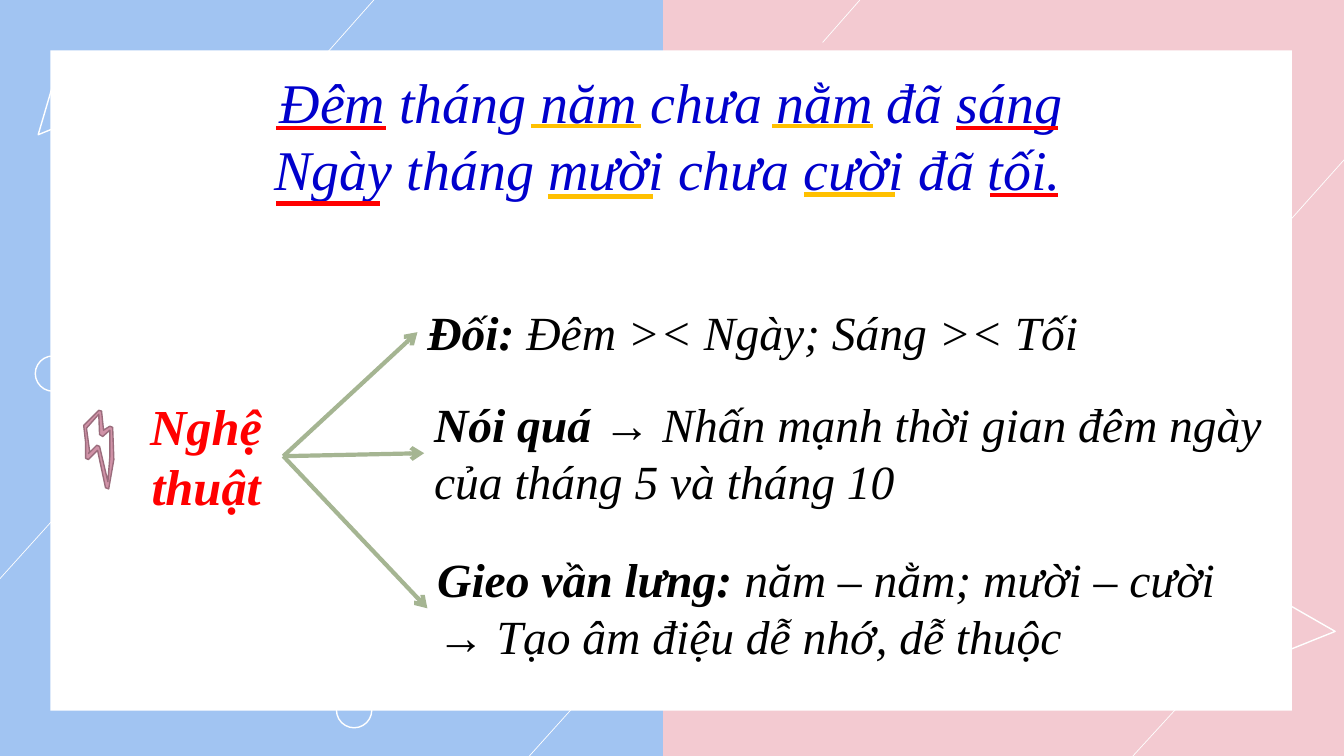
from collections import namedtuple

from lxml import etree
from pptx import Presentation
from pptx.dml.color import RGBColor
from pptx.enum.shapes import MSO_CONNECTOR, MSO_SHAPE
from pptx.enum.text import MSO_AUTO_SIZE, PP_ALIGN
from pptx.oxml.ns import qn
from pptx.util import Cm, Pt

BLUE = RGBColor(0xA1, 0xC4, 0xF2)
PINK = RGBColor(0xF3, 0xCA, 0xD1)
WHITE = RGBColor(0xFF, 0xFF, 0xFF)
BLACK = RGBColor(0x00, 0x00, 0x00)
VERSE_BLUE = RGBColor(0x00, 0x00, 0xCC)
RED = RGBColor(0xFF, 0x00, 0x00)
GOLD = RGBColor(0xFF, 0xC0, 0x00)
GREEN = RGBColor(0xA5, 0xB5, 0x92)
MAUVE = RGBColor(0xD0, 0x92, 0xA7)
DARK_MAUVE = RGBColor(0x9A, 0x6C, 0x7C)

RECTANGLE = MSO_SHAPE.RECTANGLE
TRIANGLE = MSO_SHAPE.ISOSCELES_TRIANGLE
OVAL = MSO_SHAPE.OVAL
STRAIGHT = MSO_CONNECTOR.STRAIGHT
GROW = MSO_AUTO_SIZE.SHAPE_TO_FIT_TEXT
LEFT, CENTER = PP_ALIGN.LEFT, PP_ALIGN.CENTER
RIGHT_SIDE, LEFT_SIDE = 3, 1
FONT = "Times New Roman"

# All lengths in a Box are centimetres.
Box = namedtuple("Box", "left top width height")
PAGE = Box(0, 0, 33.87, 19.05)

BOLT_OUTER = [(69, 43), (53, 53), (48, 5), (41, 3), (3, 41), (8, 86), (8, 124),
              (15, 127), (38, 104), (58, 198), (66, 201), (79, 127), (76, 46)]
BOLT_INNER = [(69, 119), (64, 183), (43, 94), (36, 91), (15, 112), (18, 107),
              (10, 48), (41, 13), (43, 64), (51, 69), (69, 53)]


def inside(box, left, top, width, height):
    """Return a box whose left and top are measured from another box."""
    return Box(box.left + left, box.top + top, width, height)


def add_figure(slide, kind, box, fill=None, line=None):
    figure = slide.shapes.add_shape(kind, *map(Cm, box))
    paint(figure, fill, line)
    return figure


def paint(figure, fill, line):
    figure.shadow.inherit = False
    if fill is None:
        figure.fill.background()
    else:
        figure.fill.solid()
        figure.fill.fore_color.rgb = fill
    if line is None:
        figure.line.fill.background()
    else:
        figure.line.color.rgb = line
        figure.line.width = Pt(1)


def add_line(slide, box, x1, y1, x2, y2, color, weight):
    ends = (box.left + x1, box.top + y1, box.left + x2, box.top + y2)
    line = slide.shapes.add_connector(STRAIGHT, *map(Cm, ends))
    line.line.color.rgb = color
    line.line.width = Pt(weight)
    etree.SubElement(line._element.spPr, qn("a:effectLst"))
    return line


def add_text(slide, box, paragraphs, size, align=LEFT, wrap=True):
    """Each paragraph is a list of (text, colour, bold) spans."""
    text_box = slide.shapes.add_textbox(*map(Cm, box))
    frame = text_box.text_frame
    frame.word_wrap = wrap
    frame.auto_size = GROW
    for number, spans in enumerate(paragraphs):
        para = frame.add_paragraph() if number else frame.paragraphs[0]
        para.alignment = align
        for text, color, bold in spans:
            span = para.add_run()
            span.text = text
            span.font.name = FONT
            span.font.size = Pt(size)
            span.font.italic = True
            span.font.bold = bold
            span.font.color.rgb = color
    return text_box


def draw_backdrop(slide, box):
    blue_width = 16.71
    add_figure(slide, RECTANGLE, inside(box, 0, 0, blue_width, box.height), BLUE)
    add_figure(slide, RECTANGLE,
               inside(box, blue_width, 0, box.width - blue_width, box.height), PINK)
    for left, top in [(0.61, 1.57), (31.17, 14.94)]:
        triangle = add_figure(slide, TRIANGLE, inside(box, left, top, 2.29, 1.45),
                              line=WHITE)
        triangle.rotation = 338.1
    for left, top in [(0.89, 8.97), (8.48, 17.45)]:
        add_figure(slide, OVAL, inside(box, left, top, 0.89, 0.89), line=WHITE)
    for ends in [(7.04, 2.69, 9.42, 0), (20.73, 1.07, 21.67, 0),
                 (13.34, 19.05, 14.96, 17.25), (28.55, 19.05, 29.64, 17.86),
                 (32.36, 5.72, 33.87, 4.03), (0, 14.58, 1.47, 12.95)]:
        add_line(slide, box, *ends, WHITE, 0.5)
    add_figure(slide, RECTANGLE, inside(box, 1.27, 1.27, 31.29, 16.64), WHITE)


def draw_verse(slide, box):
    verses = ["Đêm tháng năm chưa nằm đã sáng", "Ngày tháng mười chưa cười đã tối."]
    text_box = add_text(slide, box, [[(verse, VERSE_BLUE, False)] for verse in verses], 40)
    for para, margin in zip(text_box.text_frame.paragraphs, (0.48, 0.35)):
        properties = para._p.get_or_add_pPr()
        properties.set("marL", str(Cm(margin)))
        properties.set("indent", "0")
    for start, end, y, color in [
            (0.64, 3.4, 1.65, RED), (7.06, 9.83, 1.6, GOLD),
            (13.13, 15.67, 1.6, GOLD), (17.78, 20.35, 1.65, RED),
            (0.64, 3.25, 3.56, RED), (7.49, 10.13, 3.38, GOLD),
            (13.94, 16.23, 3.33, GOLD), (18.64, 20.35, 3.35, RED)]:
        add_line(slide, box, start, y, end, y, color, 3)


def draw_bolt(slide, left, top):
    builder = slide.shapes.build_freeform(*BOLT_OUTER[0], scale=Cm(0.01))
    builder.add_line_segments(BOLT_OUTER[1:])
    builder.move_to(*BOLT_INNER[0])
    builder.add_line_segments(BOLT_INNER[1:])
    paint(builder.convert_to_shape(Cm(left), Cm(top)), MAUVE, DARK_MAUVE)


def draw_techniques(slide, box):
    draw_bolt(slide, box.left, box.top + 2.79)
    label = add_text(slide, inside(box, 1.17, 2.31, 3.89, 3.33),
                     [[("Nghệ", RED, True)], [("thuật", RED, True)]], 36, CENTER)
    branches = [
        (inside(box, 8.44, 0, 21.95, 1.7), True,
         [[("Đối: ", BLACK, True), ("Đêm >< Ngày; Sáng >< Tối", BLACK, False)]]),
        (inside(box, 8.61, 2.31, 21.67, 3.18), True,
         [[("Nói quá ", BLACK, True),
           ("→ Nhấn mạnh thời gian đêm ngày của tháng 5 và tháng 10", BLACK, False)]]),
        (inside(box, 8.69, 6.22, 20.35, 3.18), False,
         [[("Gieo vần lưng: ", BLACK, True), ("năm – nằm; mười – cười", BLACK, False)],
          [("→ Tạo âm điệu dễ nhớ, dễ thuộc", BLACK, False)]]),
    ]
    for branch_box, wrap, paragraphs in branches:
        branch = add_text(slide, branch_box, paragraphs, 34, wrap=wrap)
        arrow = add_line(slide, box, 0, 0, 1, 1, GREEN, 3)
        arrow.begin_connect(label, RIGHT_SIDE)
        arrow.end_connect(branch, LEFT_SIDE)
        etree.SubElement(arrow.line._get_or_add_ln(), qn("a:tailEnd"), type="arrow")


def main():
    deck = Presentation()
    deck.slide_width, deck.slide_height = Cm(PAGE.width), Cm(PAGE.height)
    slide = deck.slides.add_slide(deck.slide_layouts[6])
    draw_backdrop(slide, PAGE)
    draw_verse(slide, Box(6.32, 1.57, 22.02, 3.68))
    draw_techniques(slide, Box(2.08, 7.52, 30.38, 9.4))
    deck.save("out.pptx")


if __name__ == "__main__":
    main()
